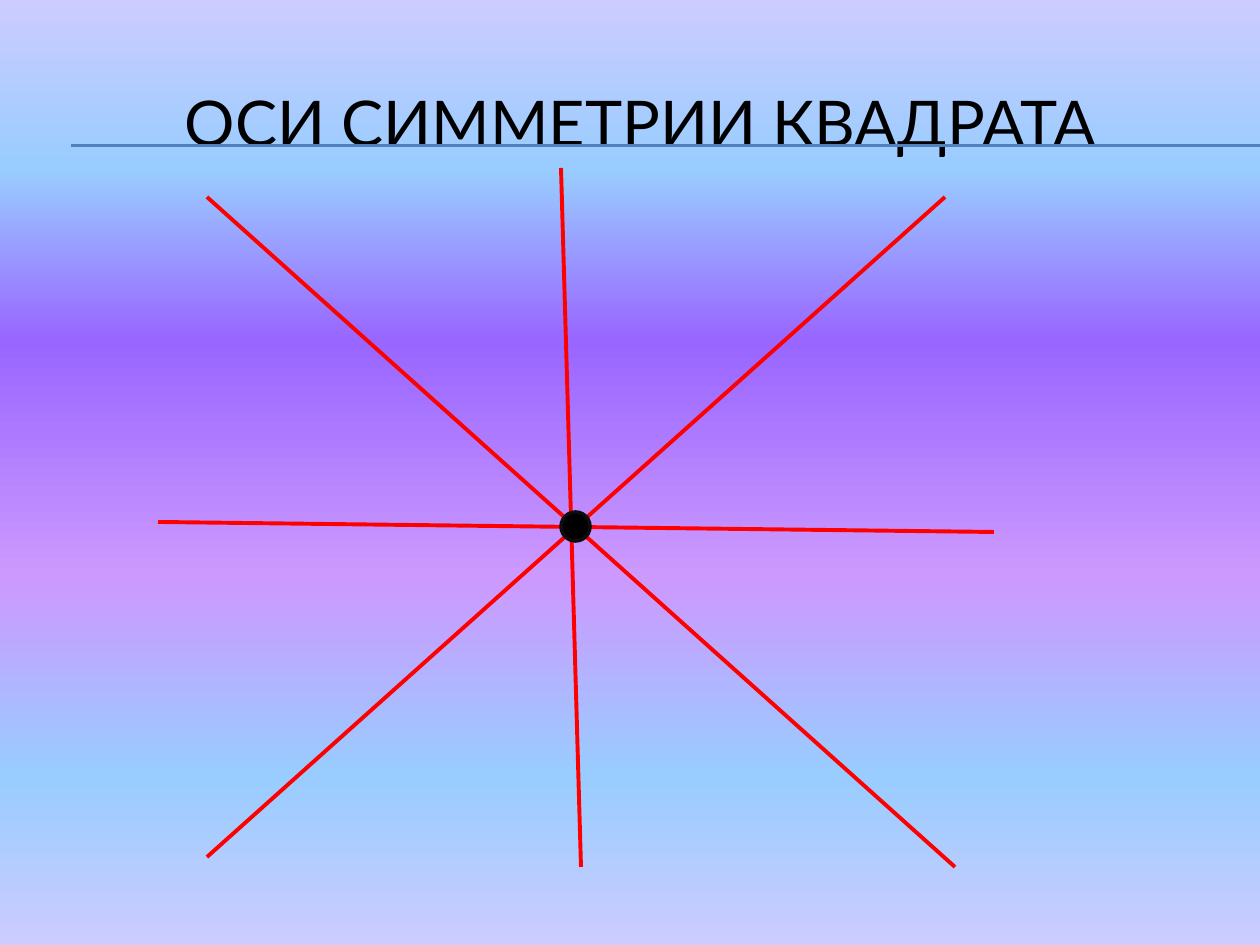
from dataclasses import dataclass

from lxml import etree
from pptx import Presentation
from pptx.dml.color import RGBColor
from pptx.enum.shapes import MSO_CONNECTOR, MSO_SHAPE
from pptx.enum.text import MSO_ANCHOR, PP_ALIGN
from pptx.oxml.ns import qn
from pptx.util import Pt

LINE = MSO_CONNECTOR.STRAIGHT
OVAL = MSO_SHAPE.OVAL
MIDDLE = MSO_ANCHOR.MIDDLE
CENTER = PP_ALIGN.CENTER
TITLE_ONLY = 5
SCALE = 914400 / 126  # EMU in one px


@dataclass(frozen=True)
class Theme:
    font: str = "Lato"
    size: int = 36
    ink: str = "000000"
    edge: str = "0D0D0D"
    rule: str = "4F81BD"
    axis: str = "FF0000"
    sky: tuple = (
        (0, "CCCCFF"), (18, "99CCFF"), (36, "9966FF"),
        (61, "CC99FF"), (82, "99CCFF"), (100, "CCCCFF"),
    )


THEME = Theme()
RULES = [(71, 145, 1260, 145), (71, 146, 1260, 146)]
AXES = [
    (207, 857, 945, 197),
    (207, 197, 955, 867),
    (158, 522, 994, 532),
    (561, 168, 581, 867),
]


def px(*values):
    return [round(v * SCALE) for v in values]


def rgb(color):
    return RGBColor.from_string(color)


def paint_sky(slide, stops):
    fill = slide.background.fill
    fill.gradient()
    grad = slide.background._cSld.find(".//" + qn("a:gradFill"))
    items = grad.find(qn("a:gsLst"))
    for old in list(items):
        items.remove(old)
    for place, color in stops:
        stop = etree.SubElement(items, qn("a:gs"), pos=str(place * 1000))
        etree.SubElement(stop, qn("a:srgbClr"), val=color)
    grad.find(qn("a:lin")).set("ang", "5400000")


def add_line(slide, ends, color, width):
    line = slide.shapes.add_connector(LINE, *px(*ends))
    line.line.color.rgb = rgb(color)
    line.line.width = Pt(width)
    etree.SubElement(line._element.spPr, qn("a:effectLst"))


def add_title(slide, text, box):
    title = slide.shapes.title
    title.left, title.top, title.width, title.height = px(*box)
    frame = title.text_frame
    frame.word_wrap = True
    frame.vertical_anchor = MIDDLE
    para = frame.paragraphs[0]
    para.alignment = CENTER
    run = para.add_run()
    run.text = text
    run.font.name = THEME.font
    run.font.size = Pt(THEME.size)
    run.font.color.rgb = rgb(THEME.ink)


def add_dot(slide, box):
    dot = slide.shapes.add_shape(OVAL, *px(*box))
    dot.shadow.inherit = False
    dot.fill.solid()
    dot.fill.fore_color.rgb = rgb(THEME.ink)
    dot.line.color.rgb = rgb(THEME.edge)
    dot.line.width = Pt(2)


def main():
    deck = Presentation()
    deck.slide_width, deck.slide_height = px(1260, 945)
    slide = deck.slides.add_slide(deck.slide_layouts[TITLE_ONLY])
    paint_sky(slide, THEME.sky)

    # Heading over its double rule
    for ends in RULES:
        add_line(slide, ends, THEME.rule, 0.75)
    add_title(slide, "ОСИ СИММЕТРИИ КВАДРАТА", (42, 63, 1197, 116))

    # Axes of symmetry and their common point
    for ends in AXES:
        add_line(slide, ends, THEME.axis, 2.25)
    add_dot(slide, (561, 512, 29, 29))

    deck.save("out.pptx")


if __name__ == "__main__":
    main()
